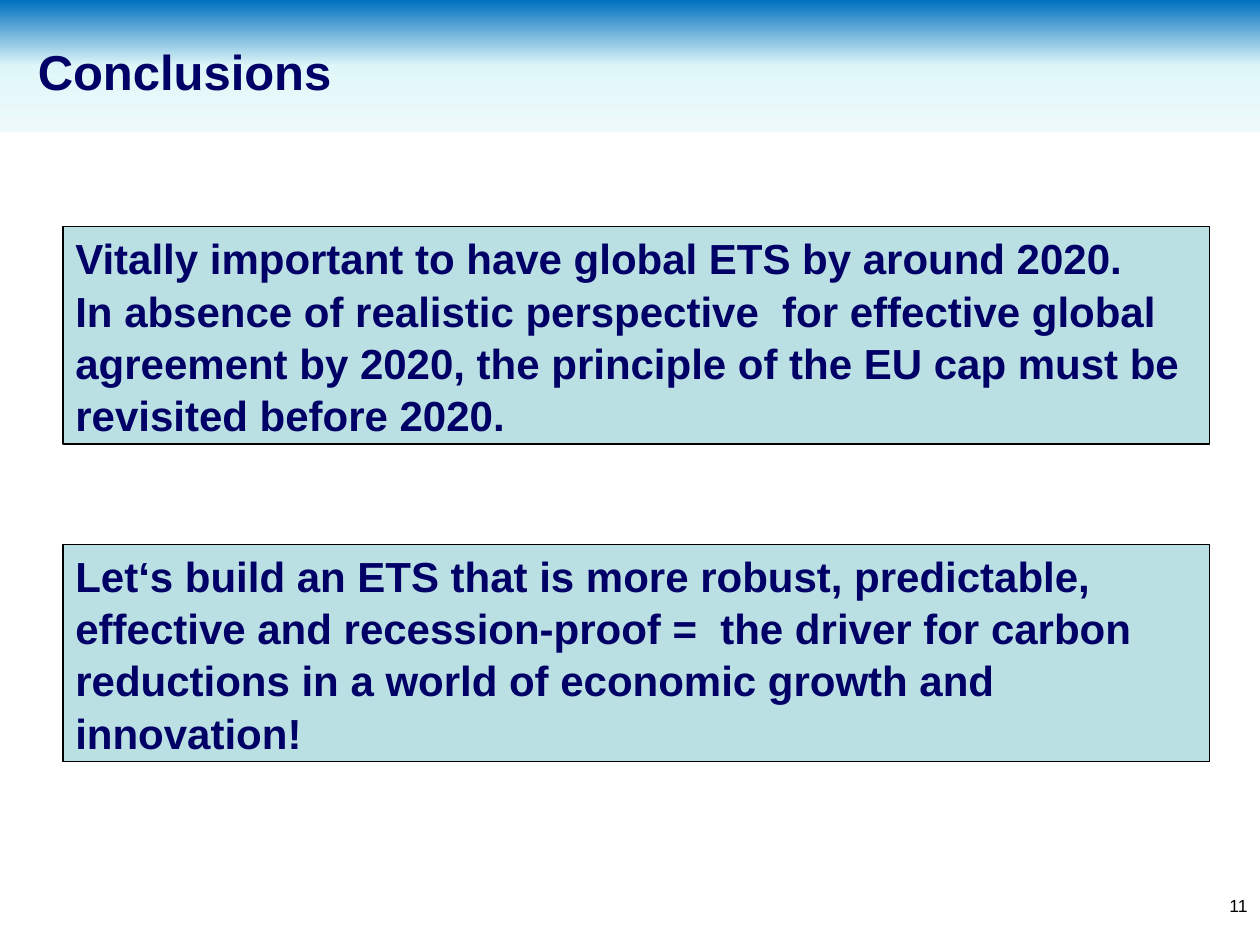
from copy import deepcopy

from pptx import Presentation
from pptx.dml.color import RGBColor
from pptx.enum.shapes import MSO_SHAPE
from pptx.enum.text import MSO_ANCHOR, PP_ALIGN
from pptx.util import Inches, Pt

RECT = MSO_SHAPE.RECTANGLE
TOP, MIDDLE = MSO_ANCHOR.TOP, MSO_ANCHOR.MIDDLE
LEFT, RIGHT = PP_ALIGN.LEFT, PP_ALIGN.RIGHT
WIDE, HIGH = 10, 7.5
TITLE_ONLY = 5


def tint(code):
    return RGBColor.from_string(code)


class Deck:
    font, navy, black, pale = "Arial", "000066", "000000", "BBE0E3"

    def __init__(self):
        self.prs = Presentation()
        self.prs.slide_width, self.prs.slide_height = Inches(WIDE), Inches(HIGH)
        self.slide = self.prs.slides.add_slide(self.prs.slide_layouts[TITLE_ONLY])

    def area(self, x, y, w, h):
        """Turn shares of the slide into lengths."""
        return [Inches(x * WIDE), Inches(y * HIGH), Inches(w * WIDE), Inches(h * HIGH)]

    def label(self, shape, text, size, color, bold=False, align=LEFT,
              anchor=MIDDLE, lead=1.0):
        frame = shape.text_frame
        frame.text = text
        frame.word_wrap = True
        frame.vertical_anchor = anchor
        for para in frame.paragraphs:
            para.alignment = align
            para.line_spacing = lead
            for run in para.runs:
                run.font.name, run.font.size = self.font, Pt(size)
                run.font.bold = bold
                run.font.color.rgb = tint(color)

    def band(self, area, codes):
        """Draw a rectangle that fades downward, behind everything else."""
        shape = self.slide.shapes.add_shape(RECT, *self.area(*area))
        shape.shadow.inherit = False
        shape.line.fill.background()
        fill = shape.fill
        fill.gradient()
        fill.gradient_angle = 270
        first = fill.gradient_stops[0]._gs
        first.addnext(deepcopy(first))
        for i, (stop, code) in enumerate(zip(fill.gradient_stops, codes)):
            stop.position = i / (len(codes) - 1)
            stop.color.rgb = tint(code)
        tree = self.slide.shapes._spTree
        tree.insert(2, shape._element)

    def title(self, area, text):
        shape = self.slide.shapes.title
        shape.left, shape.top, shape.width, shape.height = self.area(*area)
        self.label(shape, text, 28, self.navy, bold=True)

    def box(self, area, text):
        shape = self.slide.shapes.add_shape(RECT, *self.area(*area))
        shape.shadow.inherit = False
        shape.fill.solid()
        shape.fill.fore_color.rgb = tint(self.pale)
        shape.line.color.rgb = tint(self.black)
        shape.line.width = Pt(0.75)
        self.label(shape, text, 24, self.navy, bold=True, lead=1.04)

    def number(self, area, text):
        shape = self.slide.shapes.add_textbox(*self.area(*area))
        self.label(shape, text, 10, self.black, align=RIGHT, anchor=TOP)


def main():
    deck = Deck()

    # Header
    deck.band((0, 0, 1, 0.14), ["0070C0", "DFF6F8", "EFFAFB"])
    deck.title((0.02, 0.03, 0.98, 0.09), "Conclusions")

    # Messages, evenly stepped down the slide
    notes = [
        "Vitally important to have global ETS by around 2020.\n"
        "In absence of realistic perspective  for effective global agreement "
        "by 2020, the principle of the EU cap must be revisited before 2020.",
        "Let‘s build an ETS that is more robust, predictable, effective and "
        "recession-proof =  the driver for carbon reductions in a world of "
        "economic growth and innovation!",
    ]
    top, step = 0.24, 0.336
    for i, note in enumerate(notes):
        deck.box((0.05, top + i * step, 0.91, 0.23), note)

    # Page number
    deck.number((0.94, 0.94, 0.06, 0.06), "11")

    deck.prs.save("out.pptx")


if __name__ == "__main__":
    main()
